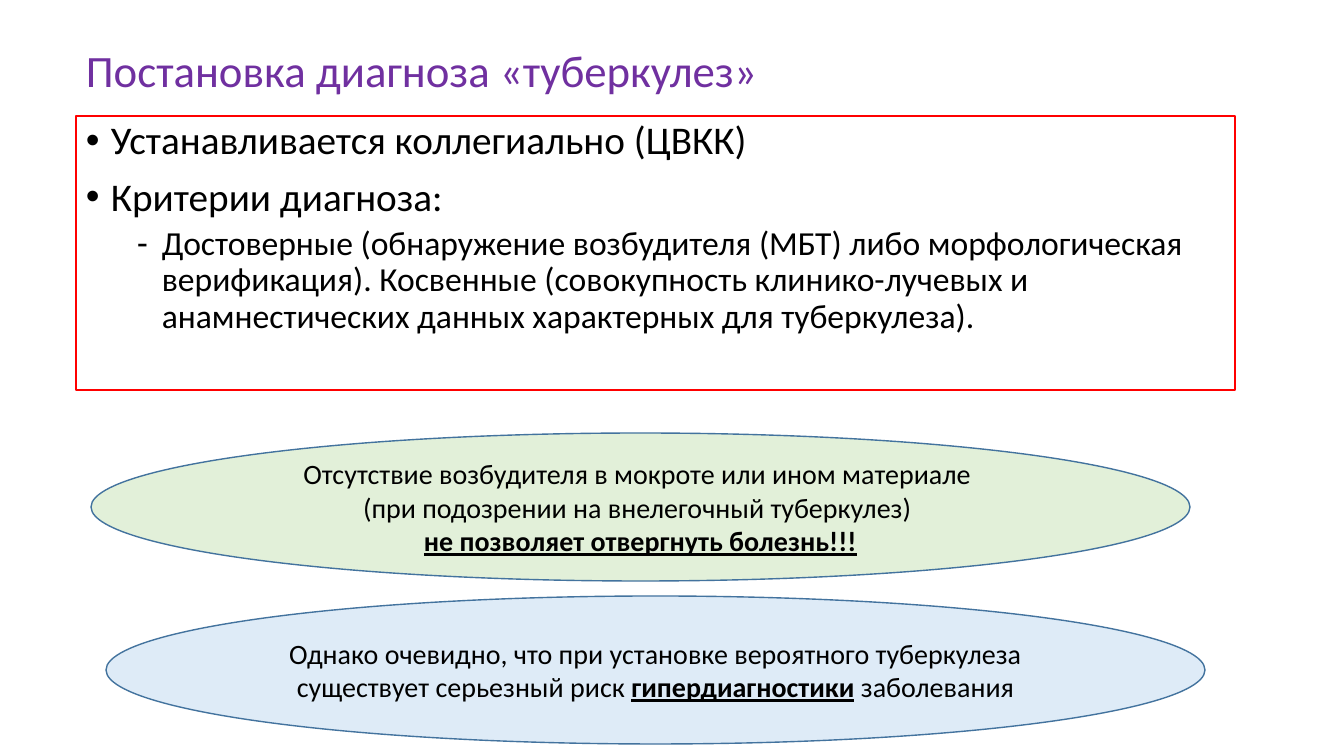
from dataclasses import dataclass

from lxml import etree
from pptx import Presentation
from pptx.dml.color import RGBColor
from pptx.enum.shapes import MSO_SHAPE
from pptx.enum.text import MSO_ANCHOR, PP_ALIGN
from pptx.oxml.ns import qn
from pptx.util import Emu, Pt

RECTANGLE, OVAL = MSO_SHAPE.RECTANGLE, MSO_SHAPE.OVAL
TOP, MIDDLE = MSO_ANCHOR.TOP, MSO_ANCHOR.MIDDLE
LEFT, CENTER = PP_ALIGN.LEFT, PP_ALIGN.CENTER
BLANK_LAYOUT = 6
EMU_PER_PX = 914400 / 100.8


@dataclass(frozen=True)
class Theme:
    font: str = "Calibri"
    title: str = "7030A0"
    text: str = "000000"
    frame: str = "FF0000"
    oval_line: str = "43739E"
    green: str = "E2F0D9"
    blue: str = "DEEBF7"
    title_size: int = 32
    item_size: int = 28
    detail_size: int = 24
    note_size: int = 20


THEME = Theme()
STRONG = {"bold": True, "underline": True}
ITEM = {"size": THEME.item_size, "bullet": "•", "margin": 25, "before": 10}
DETAIL = {"size": THEME.detail_size, "bullet": "-", "margin": 76, "before": 5}
HANGING = 25

CRITERIA = [
    ("Устанавливается коллегиально (ЦВКК)", ITEM),
    ("Критерии диагноза:", ITEM),
    ("Достоверные (обнаружение возбудителя (МБТ) либо морфологическая "
     "верификация). Косвенные (совокупность клинико-лучевых и "
     "анамнестических данных характерных для туберкулеза).", DETAIL),
]
ABSENCE_NOTE = [
    [("Отсутствие возбудителя в мокроте или ином материале ", {})],
    [("(при подозрении на внелегочный туберкулез) ", {})],
    [("не позволяет отвергнуть болезнь!!!", STRONG)],
]
RISK_NOTE = [
    [("Однако очевидно, что при установке вероятного туберкулеза "
      "существует серьезный риск ", {}),
     ("гипердиагностики", STRONG),
     (" заболевания", {})],
]


def px(value):
    return Emu(round(value * EMU_PER_PX))


def color(code):
    return RGBColor.from_string(code)


def apply(target, values):
    for name, value in values.items():
        setattr(target, name, value)


def add_span(para, text, size, shade=THEME.text, **style):
    span = para.add_run()
    span.text = text
    apply(span.font, {"name": THEME.font, "size": Pt(size), **style})
    span.font.color.rgb = color(shade)


def add_bullet(para, mark, margin):
    properties = para._p.get_or_add_pPr()
    properties.set("marL", str(px(margin)))
    properties.set("indent", str(-px(HANGING)))
    etree.SubElement(properties, qn("a:buFont")).set("typeface", "Arial")
    etree.SubElement(properties, qn("a:buChar")).set("char", mark)


def next_para(frame, index):
    return frame.add_paragraph() if index else frame.paragraphs[0]


def add_panel(page, kind, bounds, line, width, fill=None, anchor=MIDDLE):
    panel = page.shapes.add_shape(kind, *map(px, bounds))
    panel.shadow.inherit = False
    if fill:
        panel.fill.solid()
        panel.fill.fore_color.rgb = color(fill)
    else:
        panel.fill.background()
    panel.line.color.rgb = color(line)
    panel.line.width = Pt(width)
    apply(panel.text_frame, {"word_wrap": True, "vertical_anchor": anchor})
    return panel.text_frame


def add_title(page, text):
    box = page.shapes.add_textbox(*map(px, (76, 0, 1159, 146)))
    apply(box.text_frame, {"word_wrap": True, "vertical_anchor": MIDDLE})
    para = box.text_frame.paragraphs[0]
    para.line_spacing = 0.9
    add_span(para, text, THEME.title_size, THEME.title)


def add_criteria(page, items):
    frame = add_panel(page, RECTANGLE, (76, 116, 1159, 274), THEME.frame, 1.5,
                      anchor=TOP)
    for index, (text, style) in enumerate(items):
        para = next_para(frame, index)
        add_bullet(para, style["bullet"], style["margin"])
        apply(para, {"alignment": LEFT, "line_spacing": 0.9,
                     "space_before": Pt(style["before"] if index else 0)})
        add_span(para, text, style["size"])


def add_note(page, left, top, fill, lines):
    frame = add_panel(page, OVAL, (left, top, 1099, 148), THEME.oval_line, 1, fill)
    for index, spans in enumerate(lines):
        para = next_para(frame, index)
        para.alignment = CENTER
        for text, style in spans:
            add_span(para, text, THEME.note_size, **style)


def main():
    deck = Presentation()
    apply(deck, {"slide_width": px(1344), "slide_height": px(756)})
    page = deck.slides.add_slide(deck.slide_layouts[BLANK_LAYOUT])
    add_title(page, "Постановка диагноза «туберкулез»")
    add_criteria(page, CRITERIA)
    add_note(page, 91, 433, THEME.green, ABSENCE_NOTE)
    add_note(page, 106, 596, THEME.blue, RISK_NOTE)
    deck.save("out.pptx")


if __name__ == "__main__":
    main()
